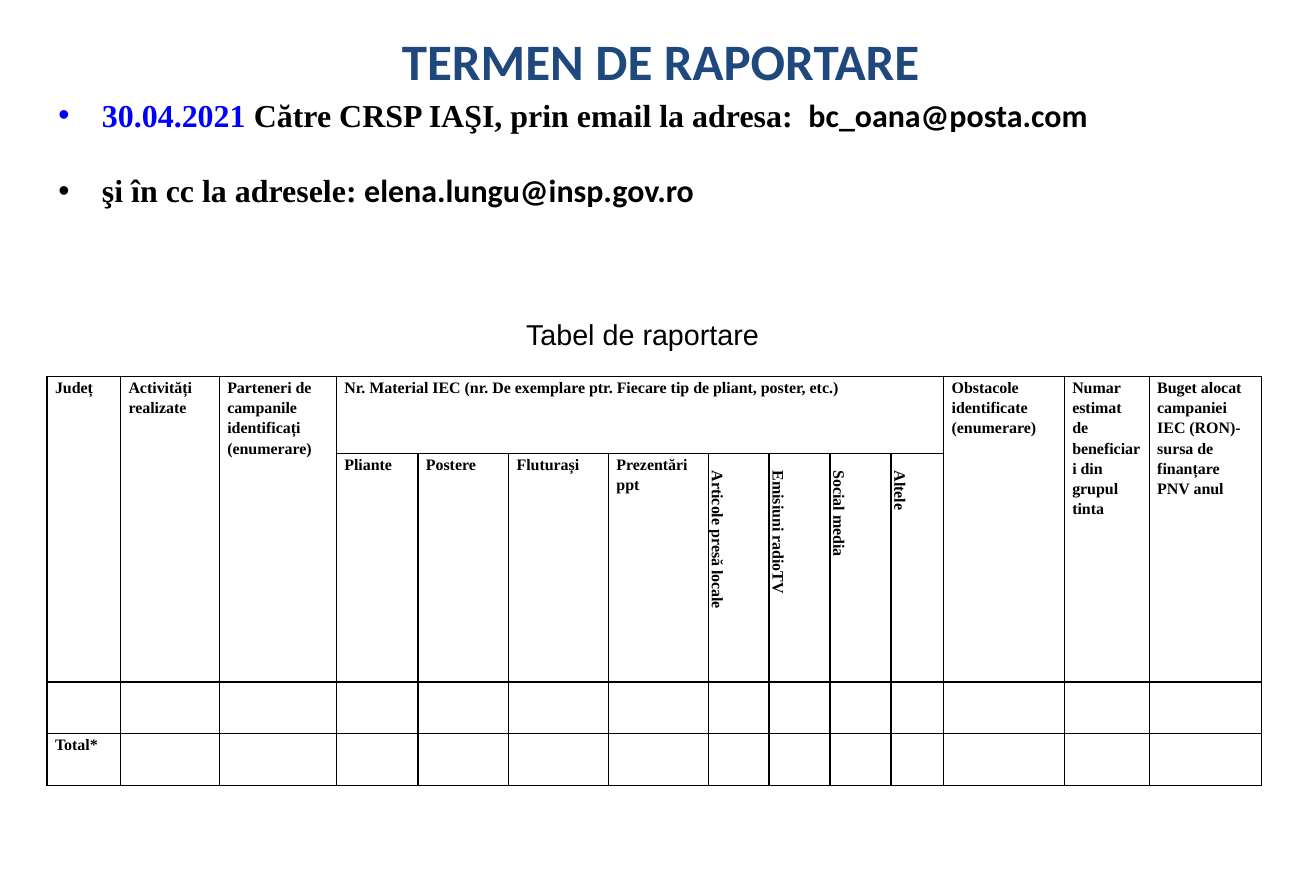
from lxml import etree
from pptx import Presentation
from pptx import util as u
from pptx.dml.color import RGBColor
from pptx.enum import text
from pptx.oxml.ns import qn

WIDTH, HEIGHT = 11.46, 7.68
NAVY = RGBColor(0x1F, 0x49, 0x7D)
BLUE = RGBColor(0, 0, 255)
BLACK = RGBColor(0, 0, 0)
SERIF, SANS, PLAIN = "Times New Roman", "Calibri", "Arial"

BULLETS = [
    [("30.04.2021 ", SERIF, BLUE),
     ("Către CRSP IAŞI, prin email la adresa: ", SERIF, BLACK),
     (" bc_oana@posta.com", SANS, BLACK)],
    [("şi în cc la adresele:", SERIF, BLACK),
     (" elena.lungu@insp.gov.ro", SANS, BLACK)],
]
COLUMNS = [0.64, 0.86, 1.02, 0.71, 0.79, 0.87, 0.87,
           0.53, 0.53, 0.53, 0.46, 1.05, 0.74, 0.98]
ROWS = [0.67, 1.99, 0.45, 0.45]
FIRST_MATERIAL, LAST_MATERIAL, FIRST_VERTICAL = 3, 10, 7
TALL_HEADERS = {
    0: "Județ",
    1: "Activități realizate",
    2: "Parteneri de campanile identificați (enumerare)",
    11: "Obstacole identificate (enumerare)",
    12: "Numar estimat de beneficiari din grupul tinta",
    13: "Buget alocat campaniei IEC (RON)- sursa de finanțare PNV anul",
}
MATERIAL_HEADER = "Nr. Material IEC (nr. De exemplare ptr. Fiecare tip de pliant, poster, etc.)"
MATERIALS = ["Pliante", "Postere", "Fluturași", "Prezentări ppt",
             "Articole presă locale", "Emisiuni radioTV", "Social media", "Altele"]


def add_run(p, words, font, size, color, bold=True):
    r = p.add_run()
    r.text = words
    r.font.color.rgb = color
    for name, value in dict(name=font, size=u.Pt(size), bold=bold).items():
        setattr(r.font, name, value)


def add_box(s, box, wrap=True):
    tf = s.shapes.add_textbox(*map(u.Inches, box)).text_frame
    tf.word_wrap = wrap
    return tf


def add_heading(s, box, words, font, size, color, bold):
    p = add_box(s, box, wrap=False).paragraphs[0]
    p.alignment = text.PP_ALIGN.CENTER
    add_run(p, words, font, size, color, bold)


def add_bullets(s, box):
    tf = add_box(s, box)
    for i, runs in enumerate(BULLETS):
        p = tf.add_paragraph() if i else tf.paragraphs[0]
        p.space_before = u.Pt(23.5 * i)
        pPr = p._p.get_or_add_pPr()
        pPr.set("marL", str(u.Inches(0.38)))
        pPr.set("indent", str(-u.Inches(0.38)))
        etree.SubElement(pPr, qn("a:buFont"), typeface=PLAIN)
        etree.SubElement(pPr, qn("a:buChar"), char="•")
        for words, font, color in runs:
            add_run(p, words, font, 20, color)


def style_cell(cell):
    """Clear the fill, set the margins and draw a thin line on all four sides."""
    margins = dict(margin_left=0.07, margin_top=0, margin_right=0.07, margin_bottom=0)
    for name, value in margins.items():
        setattr(cell, name, u.Inches(value))
    cell.fill.background()
    tcPr = cell._tc.get_or_add_tcPr()
    for i, side in enumerate("LRTB"):
        line = etree.Element(qn(f"a:ln{side}"), w=str(u.Pt(1)))
        fill = etree.SubElement(line, qn("a:solidFill"))
        etree.SubElement(fill, qn("a:srgbClr"), val=str(BLACK))
        tcPr.insert(i, line)


def write_cell(cell, words, vertical=False):
    p = cell.text_frame.paragraphs[0]
    p.line_spacing = 1.15
    add_run(p, words, SERIF, 10, BLACK)
    if vertical:
        cell._tc.get_or_add_tcPr().set("vert", "vert")
        p._p.get_or_add_pPr().set("marL", str(u.Inches(0.08)))


def add_report_table(s, left, top):
    box = map(u.Inches, (left, top, sum(COLUMNS), sum(ROWS)))
    table = s.shapes.add_table(len(ROWS), len(COLUMNS), *box).table
    table.first_row = table.horz_banding = False
    for column, width in zip(table.columns, COLUMNS):
        column.width = u.Inches(width)
    for row, height in zip(table.rows, ROWS):
        row.height = u.Inches(height)
    for cell in table.iter_cells():
        style_cell(cell)
    for c, words in TALL_HEADERS.items():
        table.cell(0, c).merge(table.cell(1, c))
        write_cell(table.cell(0, c), words)
    table.cell(0, FIRST_MATERIAL).merge(table.cell(0, LAST_MATERIAL))
    write_cell(table.cell(0, FIRST_MATERIAL), MATERIAL_HEADER)
    for c, words in enumerate(MATERIALS, FIRST_MATERIAL):
        write_cell(table.cell(1, c), words, vertical=c >= FIRST_VERTICAL)
    write_cell(table.cell(len(ROWS) - 1, 0), "Total*")


def main():
    prs = Presentation()
    prs.slide_width, prs.slide_height = u.Inches(WIDTH), u.Inches(HEIGHT)
    s = prs.slides.add_slide(prs.slide_layouts[6])
    margin = 0.41
    add_heading(s, (3.38, 0.21, 4.75, 0.65), "TERMEN DE RAPORTARE", SANS, 32, NAVY, True)
    add_bullets(s, (margin, 0.78, 10.83, 1.61))
    add_heading(s, (4.47, 2.71, 2.25, 0.41), "Tabel de raportare", PLAIN, 18, BLACK, False)
    add_report_table(s, margin, 3.28)
    prs.save("out.pptx")


if __name__ == "__main__":
    main()
